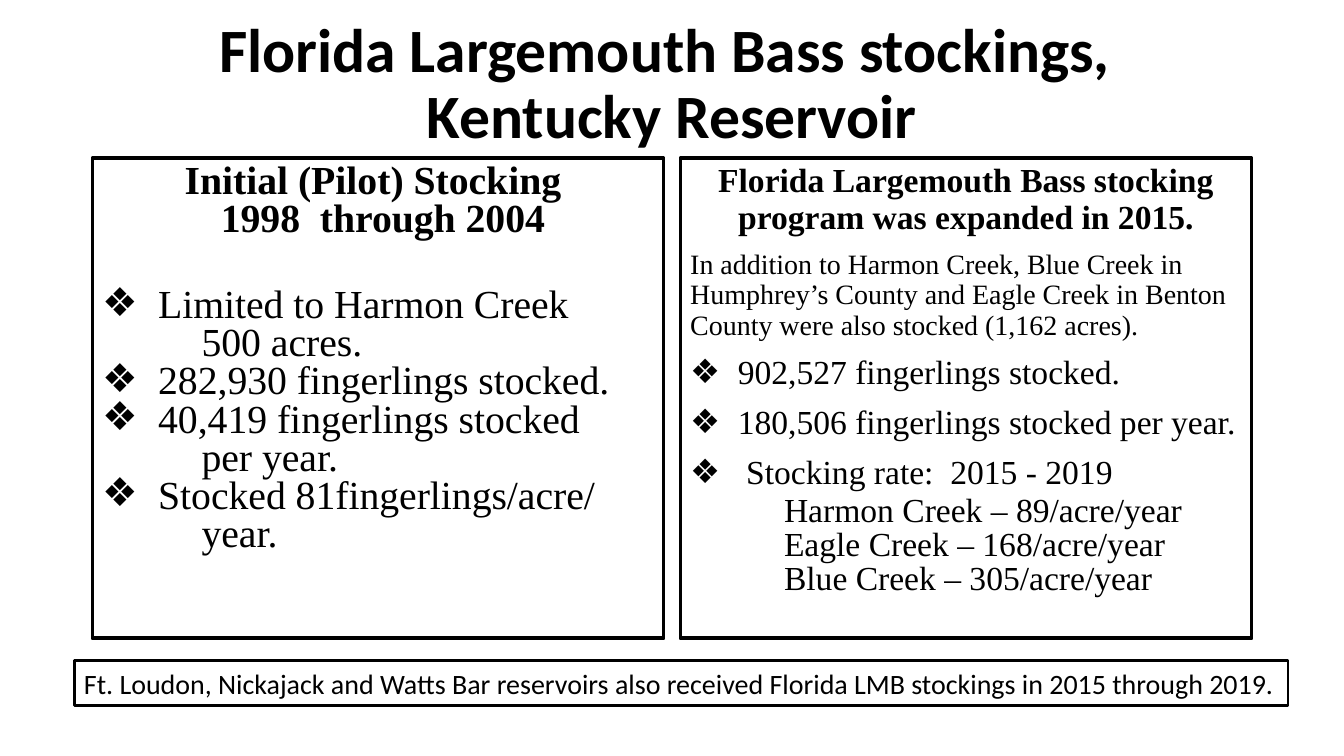
from dataclasses import dataclass

from lxml.etree import SubElement
from pptx import Presentation
from pptx.dml.color import RGBColor
from pptx.enum.shapes import MSO_SHAPE
from pptx.enum.text import MSO_ANCHOR, MSO_AUTO_SIZE, PP_ALIGN
from pptx.oxml.ns import qn
from pptx.util import Emu, Pt

PX = 9525  # EMU in one px, 96 px to the inch


@dataclass(frozen=True)
class Theme:
    ink: RGBColor = RGBColor(0, 0, 0)
    heading_font: str = "Calibri"
    body_font: str = "Times New Roman"
    title_size: float = 33
    pilot_size: float = 21.3
    expanded_size: float = 18
    small_size: float = 15
    bullet: str = "❖"


@dataclass(frozen=True)
class Line:
    """One paragraph; indent is the left edge of its text in px."""
    text: str
    size: float
    heading: bool = False
    bullet: bool = False
    indent: int = 0
    spacing: float = 0.9
    before: float = 0


class SlideBuilder:
    def __init__(self, presentation, theme):
        self.theme = theme
        self.slide = presentation.slides.add_slide(presentation.slide_layouts[3])

    def place(self, shape, left, top, width, height):
        shape.left, shape.top = Emu(left * PX), Emu(top * PX)
        shape.width, shape.height = Emu(width * PX), Emu(height * PX)

    def prepare_frame(self, shape, anchor, wrap=True):
        frame = shape.text_frame
        frame.auto_size = MSO_AUTO_SIZE.NONE
        frame.word_wrap = wrap
        frame.vertical_anchor = anchor
        frame.margin_left = frame.margin_right = Emu(7 * PX)
        frame.margin_top = frame.margin_bottom = Emu(4 * PX)
        return frame

    def outline(self, shape, width):
        shape.fill.background()
        shape.line.color.rgb = self.theme.ink
        shape.line.width = Pt(width)

    def format_runs(self, paragraph, font, size, bold=False):
        for run in paragraph.runs:
            run.font.name = font
            run.font.size = Pt(size)
            run.font.bold = bold
            run.font.color.rgb = self.theme.ink

    def title(self, text, *box):
        shape = self.slide.shapes.title
        self.place(shape, *box)
        frame = self.prepare_frame(shape, MSO_ANCHOR.MIDDLE)
        frame.text = text
        paragraph = frame.paragraphs[0]
        paragraph.alignment = PP_ALIGN.CENTER
        paragraph.line_spacing = 0.9
        self.format_runs(paragraph, self.theme.heading_font, self.theme.title_size, True)

    def panel(self, index, lines, *box):
        """Fill one body placeholder with lines inside a frame."""
        shape = self.slide.placeholders[index]
        self.place(shape, *box)
        self.outline(shape, 2)
        frame = self.prepare_frame(shape, MSO_ANCHOR.TOP)
        frame.text = "\n".join(line.text for line in lines)
        for paragraph, line in zip(frame.paragraphs, lines):
            paragraph.alignment = PP_ALIGN.CENTER if line.heading else PP_ALIGN.LEFT
            paragraph.line_spacing = line.spacing
            paragraph.space_before = Pt(line.before)
            self.format_runs(paragraph, self.theme.body_font, line.size, line.heading)
            self.set_bullet(paragraph, line)

    def set_bullet(self, paragraph, line):
        properties = paragraph._p.get_or_add_pPr()
        properties.set("marL", str(line.indent * PX))
        properties.set("indent", str(-line.indent * PX if line.bullet else 0))
        if line.bullet:
            SubElement(properties, qn("a:buChar"), char=self.theme.bullet)
        else:
            SubElement(properties, qn("a:buNone"))

    def note(self, text, *box):
        shape = self.slide.shapes.add_shape(MSO_SHAPE.RECTANGLE, 0, 0, 0, 0)
        self.place(shape, *box)
        shape.shadow.inherit = False
        self.outline(shape, 1.5)
        frame = self.prepare_frame(shape, MSO_ANCHOR.MIDDLE, wrap=False)
        frame.text = text
        frame.paragraphs[0].alignment = PP_ALIGN.LEFT
        self.format_runs(frame.paragraphs[0], self.theme.heading_font, self.theme.small_size)


def pilot_lines(theme):
    def line(text, **options):
        return Line(text, theme.pilot_size, spacing=0.8, **options)

    def item(text, before=0):
        return line(text, bullet=True, indent=40, before=before)

    return [
        line("Initial (Pilot) Stocking ", heading=True),
        line(" 1998  through 2004", heading=True),
        item("Limited to Harmon Creek", before=25.7),
        line("500 acres.", indent=71),
        item("282,930 fingerlings stocked."),
        item("40,419 fingerlings stocked"),
        line("per year.", indent=71),
        item("Stocked 81fingerlings/acre/"),
        line("year.", indent=71),
    ]


def expanded_lines(theme):
    def line(text, size=theme.expanded_size, **options):
        return Line(text, size, before=7.5, **options)

    rates = {"Harmon": 89, "Eagle": 168, "Blue": 305}
    return [
        line("Florida Largemouth Bass stocking program was expanded in 2015.", heading=True),
        line("In addition to Harmon Creek, Blue Creek in Humphrey’s County and Eagle Creek "
             "in Benton County were also stocked (1,162 acres).", theme.small_size),
        line("902,527 fingerlings stocked.", bullet=True, indent=34),
        line("180,506 fingerlings stocked per year.", bullet=True, indent=34),
        line("Stocking rate:  2015 - 2019", bullet=True, indent=40),
        *(line(f"{creek} Creek – {rate}/acre/year", indent=67, spacing=0.5)
          for creek, rate in rates.items()),
    ]


def main():
    presentation = Presentation()
    presentation.slide_width, presentation.slide_height = Emu(960 * PX), Emu(540 * PX)
    theme = Theme()
    builder = SlideBuilder(presentation, theme)
    builder.title("Florida Largemouth Bass stockings, \vKentucky Reservoir", 66, 9, 828, 104)
    panels = [pilot_lines(theme), expanded_lines(theme)]
    for column, lines in enumerate(panels):
        builder.panel(column + 1, lines, 66 + column * 420, 113, 408, 343)
    builder.note("Ft. Loudon, Nickajack and Watts Bar reservoirs also received "
                 "Florida LMB stockings in 2015 through 2019.", 53, 472, 867, 32)
    presentation.save("out.pptx")


if __name__ == "__main__":
    main()
